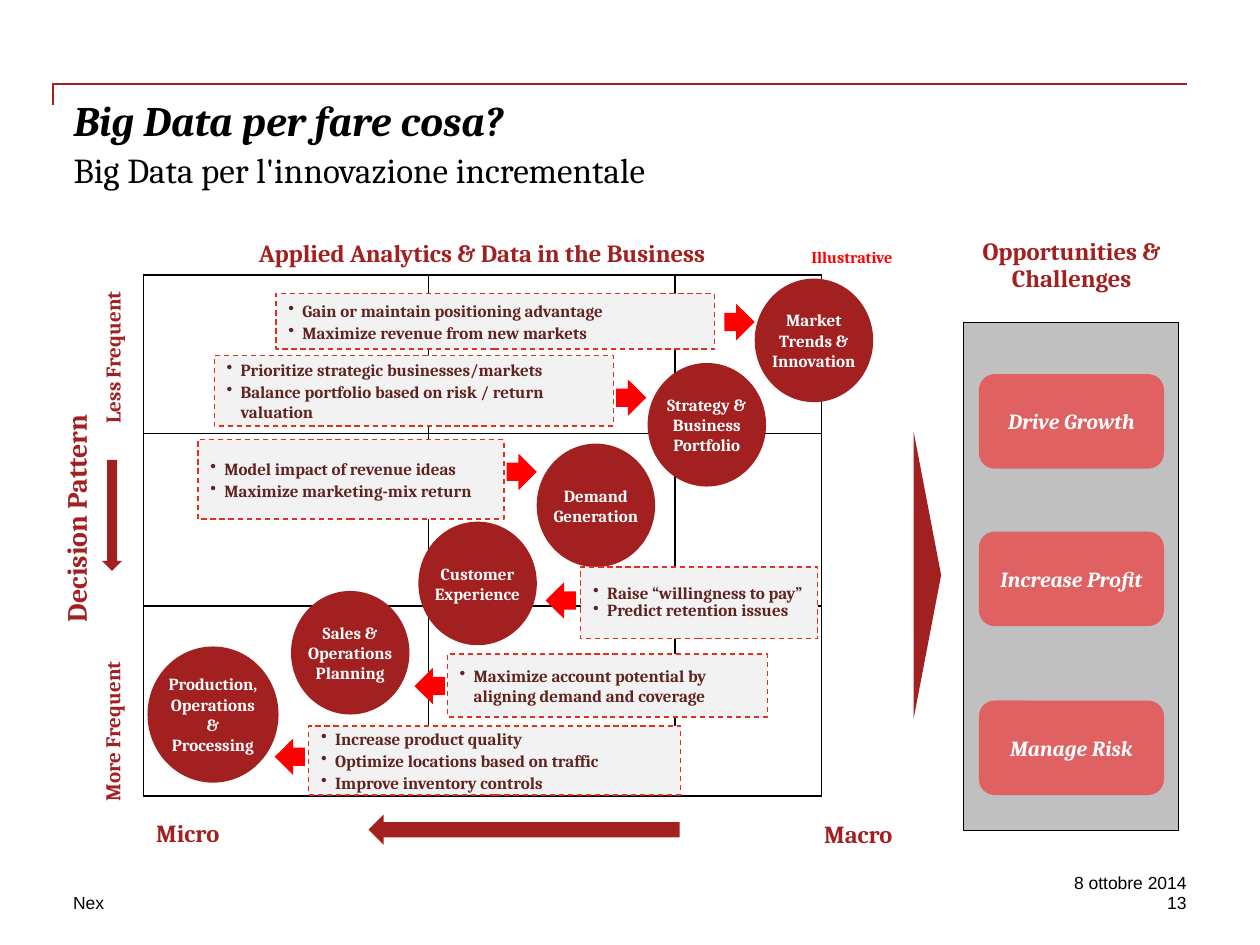
from collections import namedtuple

from lxml.etree import SubElement
from pptx import Presentation
from pptx.dml.color import RGBColor
from pptx.enum.dml import MSO_LINE
from pptx.enum.shapes import MSO_SHAPE as Preset
from pptx.enum.text import MSO_ANCHOR as Anchor, MSO_AUTO_SIZE as AutoSize, PP_ALIGN as Align
from pptx.oxml.ns import qn
from pptx.util import Pt

Box = namedtuple("Box", "left top width height")

COLOURS = {
    "brand": "A32020", "black": "000000", "white": "FFFFFF", "red": "FF0000",
    "panel": "C0C0C0", "button": "E06161", "callout": "F2F2F2",
    "dash": "E0301E", "body": "602320",
}
HEADING = {"size": Pt(14.1), "bold": True}
AXIS_END = {"size": Pt(14), "bold": True}
AXIS_SIDE = {"size": Pt(12), "bold": True}
SMALL = {"size": Pt(9.7), "bold": True}
BUTTON = {"size": Pt(12.3), "bold": True, "italic": True}
FOOTER = {"size": Pt(10), "name": "Arial"}

# Every place below is relative to the matrix: left, top, width, height
CIRCLES = [
    ("Market\nTrends &\nInnovation", (349.2, 2.2, 67.7, 70.6)),
    ("Strategy &\nBusiness\nPortfolio", (288, 50.4, 67.7, 70.6)),
    ("Demand\nGeneration", (224.6, 96.5, 67.7, 70.6)),
    ("Customer\nExperience", (157, 141.1, 67.7, 70.6)),
    ("Sales &\nOperations\nPlanning", (84.2, 180.7, 67.7, 70.6)),
    ("Production,\nOperations\n&\nProcessing", (2.2, 212.4, 74.9, 77.8)),
]
LOOSE = {"space_after": Pt(0.9)}
TIGHT = {"line_spacing": Pt(10)}
CALLOUTS = [
    (["Gain or maintain positioning advantage", "Maximize revenue from new markets"],
     (75.6, 10.8, 250.6, 31.7), LOOSE),
    (["Prioritize strategic businesses/markets",
      "Balance portfolio based on risk / return valuation"],
     (40.3, 46.1, 228.2, 40.3), LOOSE),
    (["Model impact of revenue ideas", "Maximize marketing-mix return"],
     (31, 94.3, 175, 45.4), LOOSE),
    (["Raise “willingness to pay”", "Predict retention issues"],
     (249.8, 167, 135.4, 41), TIGHT),
    (["Maximize account potential by aligning demand and coverage"],
     (173.5, 216.7, 182.9, 36), LOOSE),
    (["Increase product quality", "Optimize locations based on traffic",
      "Improve inventory controls"], (94.3, 257.8, 212.4, 39.6), LOOSE),
]
POINTERS = [
    (Preset.RIGHT_ARROW, [(331.9, 16.6), (270, 59.8), (207.4, 102.2)]),
    (Preset.LEFT_ARROW, [(229.7, 175.7), (154.8, 224.6), (74.9, 265)]),
]


def colour(name):
    return RGBColor.from_string(COLOURS[name])


def place(box, left, top, width, height):
    """Lengths of a part whose offset is measured from the box."""
    return Pt(box.left + left), Pt(box.top + top), Pt(width), Pt(height)


def apply(target, values):
    for name, value in values.items():
        setattr(target, name, value)


def write(frame, paragraphs, ink, font, paragraph_format=None, inset=None, **frame_format):
    apply(frame, {"word_wrap": True, **frame_format})
    if inset is not None:
        sides = ("margin_left", "margin_top", "margin_right", "margin_bottom")
        apply(frame, dict(zip(sides, map(Pt, inset))))
    for index, text in enumerate(paragraphs):
        paragraph = frame.add_paragraph() if index else frame.paragraphs[0]
        paragraph.text = text
        apply(paragraph, {"alignment": Align.LEFT, **(paragraph_format or {})})
        for run in paragraph.runs:
            apply(run.font, {"name": "Cambria", **font})
            run.font.color.rgb = colour(ink)


def add_label(slide, position, text, ink, font, alignment=Align.LEFT,
              inset=(0, 0, 0, 0), rotation=0, line_spacing=None, **frame_format):
    shape = slide.shapes.add_textbox(*position)
    shape.rotation = rotation
    paragraph_format = {"alignment": alignment, "line_spacing": line_spacing}
    write(shape.text_frame, [text], ink, font, paragraph_format, inset, **frame_format)


def add_block(slide, preset, position, fill, adjustments=()):
    shape = slide.shapes.add_shape(preset, *position)
    shape.shadow.inherit = False
    shape.fill.solid()
    shape.fill.fore_color.rgb = colour(fill)
    shape.line.fill.background()
    for index, value in enumerate(adjustments):
        shape.adjustments[index] = value
    return shape


def outline(shape, ink, width):
    shape.line.color.rgb = colour(ink)
    shape.line.width = Pt(width)


def add_bullets(frame):
    for paragraph in frame.paragraphs:
        properties = paragraph._p.get_or_add_pPr()
        properties.set("marL", str(Pt(8)))
        properties.set("indent", str(-Pt(8)))
        SubElement(properties, qn("a:buChar"), char="•")


def border_cell(cell):
    properties = cell._tc.get_or_add_tcPr()
    for side in ("lnL", "lnR", "lnT", "lnB"):
        line = SubElement(properties, qn("a:" + side), w=str(Pt(1)))
        fill = SubElement(line, qn("a:solidFill"))
        SubElement(fill, qn("a:srgbClr"), val=COLOURS["black"])
    cell.fill.background()


def draw_header(slide, box):
    # Bracket rule above the titles
    builder = slide.shapes.build_freeform(Pt(box.left), Pt(box.top + 12))
    builder.add_line_segments(
        [(Pt(box.left), Pt(box.top)), (Pt(box.left + box.width), Pt(box.top))], close=False)
    rule = builder.convert_to_shape()
    rule.shadow.inherit = False
    rule.fill.background()
    outline(rule, "brand", 1)
    # Title and subtitle
    add_label(slide, place(box, 11.8, 5.8, 636, 36), "Big Data per fare cosa?", "black",
              {"size": Pt(24), "bold": True, "italic": True})
    add_label(slide, place(box, 11.8, 36.8, 636, 36),
              "Big Data per l'innovazione incrementale", "black", {"size": Pt(20)})


def draw_matrix(slide, box):
    # Grid
    table = slide.shapes.add_table(3, 3, *place(box, 0, 0, box.width, box.height)).table
    apply(table, {"first_row": False, "horz_banding": False})
    for column, width in zip(table.columns, (162.7, 141.1, 83.5)):
        column.width = Pt(width)
    for row, height in zip(table.rows, (90.7, 98.6, 108.7)):
        row.height = Pt(height)
    for cell in table.iter_cells():
        border_cell(cell)
    # Headings
    add_label(slide, place(box, 20.2, -24.5, 346.3, 24.5),
              "Applied Analytics & Data in the Business", "brand", HEADING,
              Align.CENTER, inset=(7.2, 3.6, 7.2, 3.6))
    add_label(slide, place(box, 381.6, -15.8, 53.3, 11.5), "Illustrative", "red",
              {"size": Pt(9.3), "bold": True}, word_wrap=False)
    # Decision areas
    for text, position in CIRCLES:
        circle = add_block(slide, Preset.OVAL, place(box, *position), "brand")
        write(circle.text_frame, [text], "white", SMALL, {"alignment": Align.CENTER},
              word_wrap=False, vertical_anchor=Anchor.MIDDLE)
    # Callouts and their pointers
    for lines, position, spacing in CALLOUTS:
        callout = add_block(slide, Preset.RECTANGLE, place(box, *position), "callout")
        outline(callout, "dash", 0.75)
        callout.line.dash_style = MSO_LINE.DASH
        write(callout.text_frame, lines, "body", SMALL, spacing,
              vertical_anchor=Anchor.MIDDLE)
        add_bullets(callout.text_frame)
    for preset, corners in POINTERS:
        for left, top in corners:
            add_block(slide, preset, place(box, left, top, 17.3, 20.9), "red", (0.5, 0.61))


def draw_axes(slide, box):
    fit = {"word_wrap": False, "auto_size": AutoSize.SHAPE_TO_FIT_TEXT}
    for text, position, font, rotation in [
        ("Micro", (7.2, 310.3, 43.2, 17.3), AXIS_END, 0),
        ("Macro", (388.8, 311, 46.8, 17.3), AXIS_END, 0),
        ("More Frequent", (-64.8, 247, 93.6, 14.4), AXIS_SIDE, 270),
        ("Less Frequent", (-61.9, 33.8, 87.8, 14.4), AXIS_SIDE, 270),
    ]:
        add_label(slide, place(box, *position), text, "brand", font, rotation=rotation, **fit)
    add_label(slide, place(box, -121.7, 110.2, 165.6, 58.3), "Decision Pattern", "brand",
              {"size": Pt(16), "bold": True}, Align.CENTER, rotation=270,
              vertical_anchor=Anchor.MIDDLE)
    add_block(slide, Preset.DOWN_ARROW, place(box, -23.8, 105.8, 11.5, 63.4), "brand")
    add_block(slide, Preset.LEFT_ARROW, place(box, 128.5, 308.5, 177.8, 17.3), "brand")


def draw_opportunities(slide, box):
    panel = add_block(slide, Preset.RECTANGLE, place(box, 0, 0, box.width, box.height), "panel")
    outline(panel, "black", 0.5)
    add_label(slide, place(box, -21.6, -51.1, 166.3, 38.2), "Opportunities & Challenges",
              "brand", HEADING, Align.CENTER, inset=(7.2, 3.6, 7.2, 3.6), line_spacing=0.9)
    for text, top in [("Drive Growth", 29.5), ("Increase Profit", 119.5), ("Manage Risk", 216)]:
        button = add_block(slide, Preset.ROUNDED_RECTANGLE,
                           place(box, 8.6, top, 105.8, 54), "button")
        write(button.text_frame, [text], "white", BUTTON, {"alignment": Align.CENTER},
              inset=(0.7, 0, 0.7, 0), vertical_anchor=Anchor.MIDDLE)
    add_block(slide, Preset.RIGHT_ARROW, place(box, -28.8, 61.9, 15.8, 164.9), "brand", (0.5, 1))


def draw_footer(slide, box):
    add_label(slide, place(box, 0, 11.5, 204, 12), "Nex", "black", FOOTER)
    for text, top in [("8 ottobre 2014", 0), ("13", 11.5)]:
        add_label(slide, place(box, box.width - 120, top, 120, 12), text, "black",
                  FOOTER, Align.RIGHT)


def main():
    presentation = Presentation()
    apply(presentation, {"slide_width": Pt(720), "slide_height": Pt(540)})
    slide = presentation.slides.add_slide(presentation.slide_layouts[6])
    matrix = Box(82.1, 157, 387.3, 298)
    draw_header(slide, Box(30.2, 48.2, 648, 120))
    draw_matrix(slide, matrix)
    draw_axes(slide, matrix)
    draw_opportunities(slide, Box(550.8, 184.3, 122.4, 290.2))
    draw_footer(slide, Box(41.8, 498.2, 636.2, 24))
    presentation.save("out.pptx")


if __name__ == "__main__":
    main()
